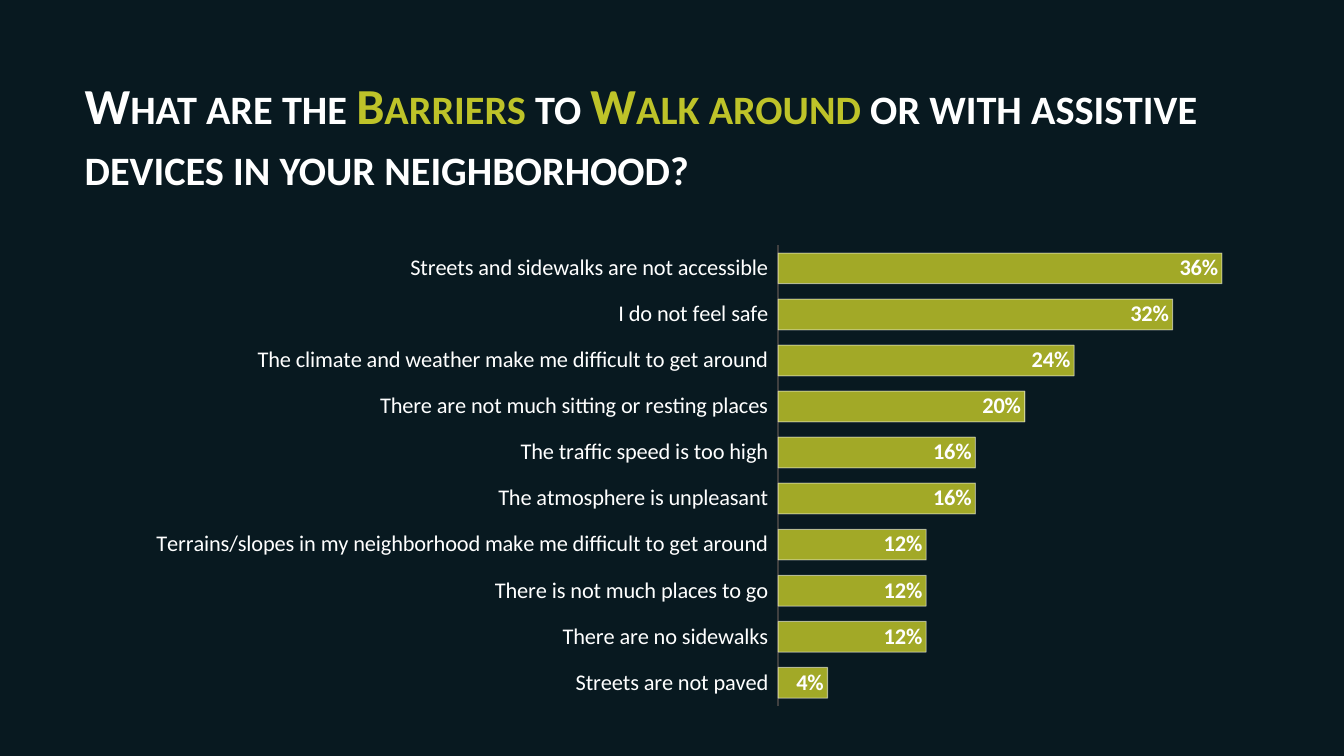
from typing import NamedTuple

from lxml.etree import SubElement
from pptx import Presentation
from pptx.chart.chart import Chart
from pptx.chart.data import CategoryChartData
from pptx.dml.color import RGBColor
from pptx.dml.fill import FillFormat
from pptx.enum.chart import XL_CHART_TYPE, XL_LABEL_POSITION, XL_TICK_LABEL_POSITION, XL_TICK_MARK
from pptx.enum.text import MSO_ANCHOR, MSO_AUTO_SIZE, PP_ALIGN
from pptx.oxml import parse_xml
from pptx.oxml.ns import nsdecls, qn
from pptx.slide import Slide
from pptx.text.text import Font
from pptx.util import Cm, Pt

NIGHT, WHITE, LIME, GREY = "081920", "FFFFFF", "BEC329", "404040"
FONT = "Calibri"


class Phrase(NamedTuple):
    text: str
    color: str


class Barrier(NamedTuple):
    label: str
    share: float


QUESTION = [
    Phrase("What are the ", WHITE),
    Phrase("Barriers", LIME),
    Phrase(" to ", WHITE),
    Phrase("Walk around ", LIME),
    Phrase("or with assistive devices in your neighborhood?", WHITE),
]

BARRIERS = [
    Barrier("Streets are not paved", 0.04),
    Barrier("There are no sidewalks", 0.12),
    Barrier("There is not much places to go", 0.12),
    Barrier("Terrains/slopes in my neighborhood make me difficult to get around", 0.12),
    Barrier("The atmosphere is unpleasant", 0.16),
    Barrier("The traffic speed is too high", 0.16),
    Barrier("There are not much sitting or resting places", 0.20),
    Barrier("The climate and weather make me difficult to get around", 0.24),
    Barrier("I do not feel safe", 0.32),
    Barrier("Streets and sidewalks are not accessible", 0.36),
]


def rgb(color: str) -> RGBColor:
    return RGBColor.from_string(color)


def set_font(font: Font, size: float, bold: bool = False) -> None:
    font.name, font.size, font.bold = FONT, Pt(size), bold
    font.color.rgb = rgb(WHITE)


def paint(fill: FillFormat, color: str) -> None:
    fill.solid()
    fill.fore_color.rgb = rgb(color)


def add_question(slide: Slide) -> None:
    title = slide.shapes.title
    title.left, title.top, title.width, title.height = Cm(1.88), Cm(1.75), Cm(29.9), Cm(3.33)
    frame = title.text_frame
    frame.word_wrap = True
    frame.auto_size = MSO_AUTO_SIZE.SHAPE_TO_FIT_TEXT
    frame.vertical_anchor = MSO_ANCHOR.TOP
    paragraph = frame.paragraphs[0]
    paragraph.alignment = PP_ALIGN.LEFT
    set_font(paragraph.font, 36, bold=True)
    for phrase in QUESTION:
        run = paragraph.add_run()
        run.text = phrase.text
        run.font.color.rgb = rgb(phrase.color)
        run._r.get_or_add_rPr().set("cap", "small")


def set_plot_area(chart: Chart, x: float, y: float, w: float, h: float) -> None:
    """Fix the inner plot area, in fractions of the chart frame."""
    plot_area = chart._chartSpace.chart.plotArea
    for layout in plot_area.findall(qn("c:layout")):
        plot_area.remove(layout)
    settings = {"layoutTarget": "inner", "xMode": "edge", "yMode": "edge",
                "x": x, "y": y, "w": w, "h": h}
    items = "".join(f'<c:{tag} val="{value}"/>' for tag, value in settings.items())
    plot_area.insert(0, parse_xml(
        f"<c:layout {nsdecls('c')}><c:manualLayout>{items}</c:manualLayout></c:layout>"))


def style_axes(chart: Chart) -> None:
    labels = chart.category_axis
    labels.major_tick_mark = labels.minor_tick_mark = XL_TICK_MARK.NONE
    labels.tick_label_position = XL_TICK_LABEL_POSITION.LOW
    labels.has_major_gridlines = False
    labels.format.line.color.rgb = rgb(GREY)
    labels.format.line.width = Pt(1.5)
    set_font(labels.tick_labels.font, 16)
    shares = chart.value_axis
    shares.minimum_scale, shares.maximum_scale = 0, 0.4
    shares.has_major_gridlines = False
    shares.visible = False


def style_bars(chart: Chart) -> None:
    plot = chart.plots[0]
    plot.gap_width = 50
    plot.vary_by_categories = False
    bars = plot.series[0]
    bars.invert_if_negative = False
    paint(bars.format.fill, LIME)
    outline = bars.format.line
    paint(outline.fill, WHITE)
    outline.width = Pt(0.75)
    fill_color, line_color = bars._element.spPr.iter(qn("a:srgbClr"))
    for color, opacity in ((fill_color, 85), (line_color, 50)):
        SubElement(color, qn("a:alpha"), val=str(opacity * 1000))
    labels = bars.data_labels
    labels.show_value = True
    labels.number_format, labels.number_format_is_linked = "0%", False
    labels.position = XL_LABEL_POSITION.INSIDE_END
    set_font(labels.font, 16, bold=True)


def add_barrier_chart(slide: Slide) -> None:
    data = CategoryChartData(number_format="0%")
    data.categories = [barrier.label for barrier in BARRIERS]
    data.add_series("Series 1", [barrier.share for barrier in BARRIERS])
    chart = slide.shapes.add_chart(
        XL_CHART_TYPE.BAR_CLUSTERED, Cm(0.51), Cm(4.62), Cm(61.82), Cm(14.22), data).chart
    chart.has_title = chart.has_legend = False
    set_font(chart.font, 10)
    set_plot_area(chart, 0.309, 0.11, 0.201, 0.816)
    style_axes(chart)
    style_bars(chart)


def main() -> None:
    deck = Presentation()
    deck.slide_width, deck.slide_height = Cm(33.87), Cm(19.05)
    slide = deck.slides.add_slide(deck.slide_layouts.get_by_name("Title Only"))
    paint(slide.background.fill, NIGHT)
    add_question(slide)
    add_barrier_chart(slide)
    deck.save("out.pptx")


if __name__ == "__main__":
    main()
